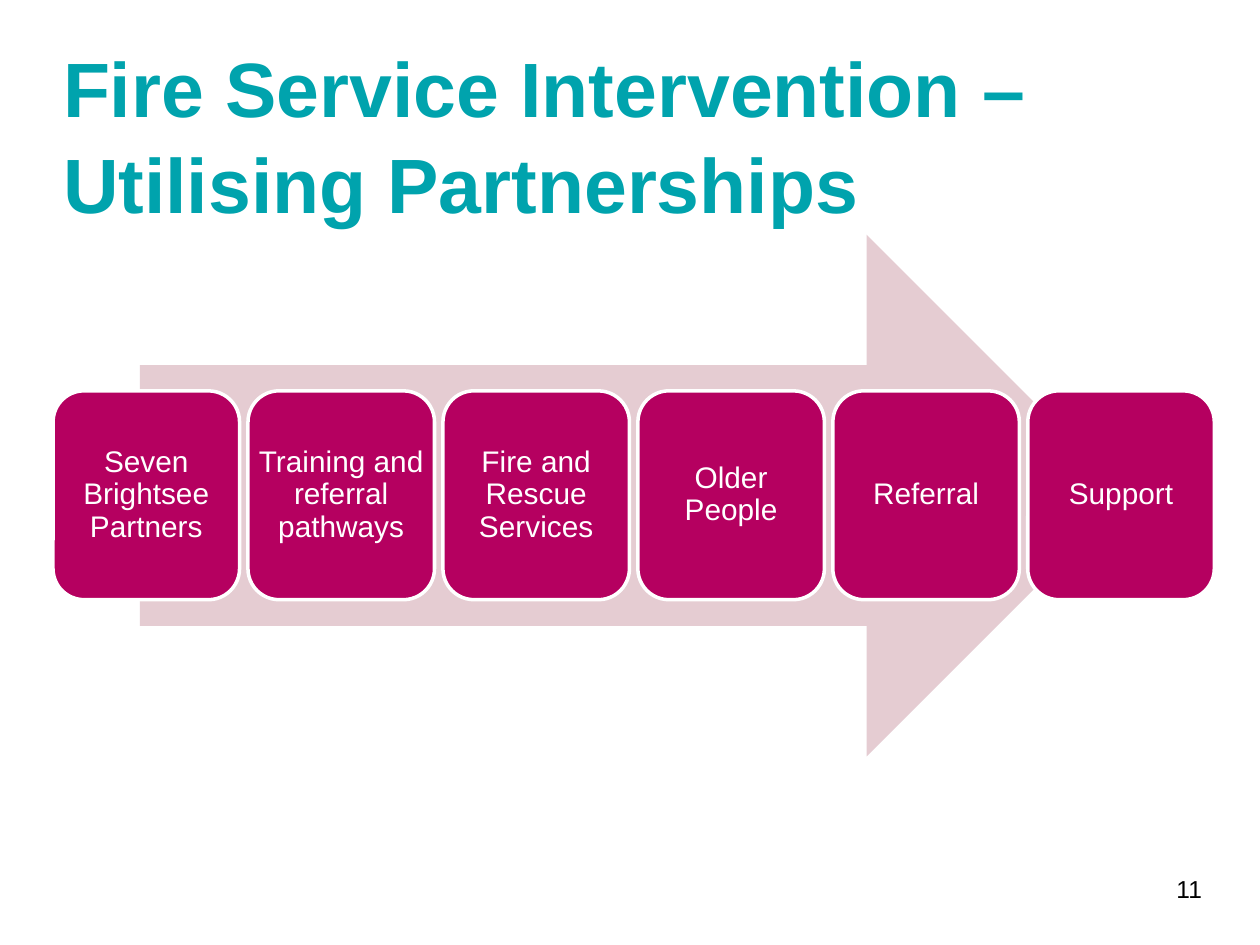
from pptx import Presentation
from pptx.dml.color import RGBColor
from pptx.enum.shapes import MSO_SHAPE
from pptx.enum.text import MSO_ANCHOR, PP_ALIGN
from pptx.util import Cm, Pt

ARROW = MSO_SHAPE.RIGHT_ARROW
ROUND = MSO_SHAPE.ROUNDED_RECTANGLE
MIDDLE = MSO_ANCHOR.MIDDLE
LEFT, CENTER, RIGHT = PP_ALIGN.LEFT, PP_ALIGN.CENTER, PP_ALIGN.RIGHT

HUES = {"teal": "00A3AD", "black": "000000", "white": "FFFFFF",
        "pink": "E5CCD2", "plum": "B50060"}
STEPS = ["Seven Brightsee Partners", "Training and referral pathways",
         "Fire and Rescue Services", "Older People", "Referral", "Support"]


def hue(name):
    return RGBColor.from_string(HUES[name])


def write(shape, text, size, color, align, bold=False):
    frame = shape.text_frame
    frame.word_wrap = True
    frame.text = text
    para = frame.paragraphs[0]
    para.alignment = align
    font = para.runs[0].font
    font.name = "Arial"
    font.size = Pt(size)
    font.bold = bold
    font.color.rgb = hue(color)
    return frame


deck = Presentation()
deck.slide_width = Cm(25.4)
deck.slide_height = Cm(19.05)
slide = deck.slides.add_slide(deck.slide_layouts[5])
shapes = slide.shapes

title = shapes.title
title.left, title.top = Cm(1.27), Cm(0.64)
title.width, title.height = Cm(23.22), Cm(4.09)
frame = write(title, "Fire Service Intervention – Utilising Partnerships",
              44, "teal", LEFT, True)
frame.vertical_anchor = MIDDLE
frame.margin_left = frame.margin_right = 0
frame.margin_top = frame.margin_bottom = 0
frame.paragraphs[0].line_spacing = 1.04

number = shapes.add_textbox(Cm(19.48), Cm(17.5), Cm(5), Cm(0.99))
write(number, "11", 14, "black", RIGHT)

arrow = shapes.add_shape(ARROW, Cm(2.82), Cm(4.73), Cm(19.91), Cm(10.52))
arrow.shadow.inherit = False
arrow.fill.solid()
arrow.fill.fore_color.rgb = hue("pink")
arrow.line.fill.background()

for i, step in enumerate(STEPS):
    box = shapes.add_shape(ROUND, Cm(1.07 + 3.93 * i), Cm(7.88),
                           Cm(3.76), Cm(4.21))
    box.shadow.inherit = False
    box.fill.solid()
    box.fill.fore_color.rgb = hue("plum")
    box.line.color.rgb = hue("white")
    box.line.width = Pt(2)
    frame = write(box, step, 17, "white", CENTER)
    frame.vertical_anchor = MIDDLE
    frame.margin_left = frame.margin_right = 0
    frame.margin_top = frame.margin_bottom = 0
    frame.paragraphs[0].line_spacing = 0.9

deck.save("out.pptx")
